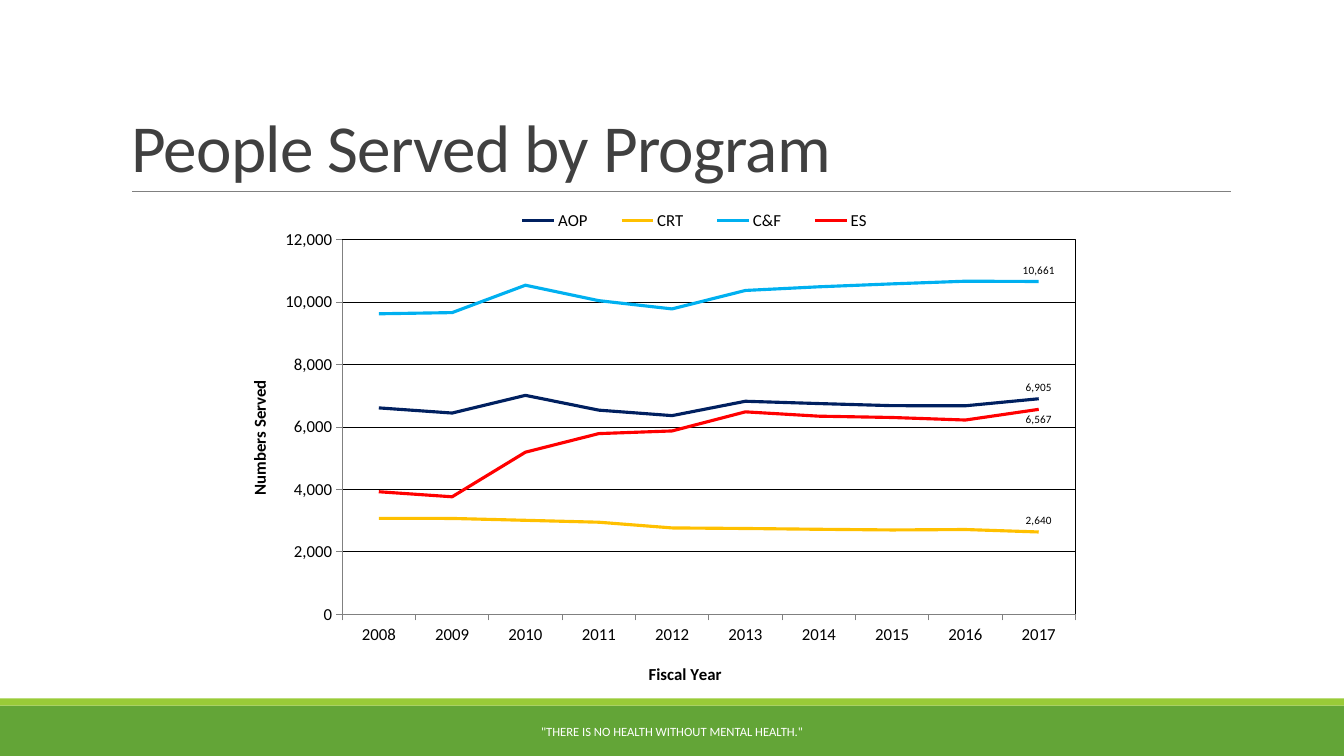
from dataclasses import dataclass

from lxml import etree
from pptx import Presentation
from pptx.chart.chart import Chart
from pptx.chart.data import CategoryChartData
from pptx.dml.color import RGBColor
from pptx.enum.chart import XL_CHART_TYPE, XL_LABEL_POSITION, XL_LEGEND_POSITION, XL_TICK_MARK
from pptx.enum.shapes import MSO_CONNECTOR, MSO_SHAPE
from pptx.enum.text import MSO_ANCHOR, MSO_AUTO_SIZE, PP_ALIGN
from pptx.oxml import parse_xml
from pptx.oxml.ns import nsdecls, qn
from pptx.slide import Slide
from pptx.util import Cm, Pt

LINE_CHART = XL_CHART_TYPE.LINE
ABOVE, BELOW = XL_LABEL_POSITION.ABOVE, XL_LABEL_POSITION.BELOW
LEGEND_TOP = XL_LEGEND_POSITION.TOP
TICK_OUTSIDE, TICK_NONE = XL_TICK_MARK.OUTSIDE, XL_TICK_MARK.NONE
STRAIGHT = MSO_CONNECTOR.STRAIGHT
RECTANGLE = MSO_SHAPE.RECTANGLE
BOTTOM, MIDDLE = MSO_ANCHOR.BOTTOM, MSO_ANCHOR.MIDDLE
NO_AUTOFIT = MSO_AUTO_SIZE.NONE
LEFT, CENTER = PP_ALIGN.LEFT, PP_ALIGN.CENTER

FONT = "Calibri"
TITLE_ONLY = 5
SLIDE_WIDTH, SLIDE_HEIGHT = 33.87, 19.05
COLORS = {
    "band": "63A537",
    "stripe": "99CB38",
    "rule": "808080",
    "title": "404040",
    "white": "FFFFFF",
    "black": "000000",
    "navy": "002060",
    "gold": "FFC000",
    "sky": "00B0F0",
    "red": "FF0000",
}
YEARS = [str(year) for year in range(2008, 2018)]


@dataclass
class Band:
    top: float
    height: float
    color: str


@dataclass
class Program:
    name: str
    color: str
    served: list[int]
    label_position: XL_LABEL_POSITION = ABOVE


BANDS = [Band(17.78, 1.27, "band"), Band(17.6, 0.18, "stripe")]
PROGRAMS = [
    Program("AOP", "navy", [6614, 6448, 7015, 6541, 6366, 6826, 6752, 6685, 6681, 6905]),
    Program("CRT", "gold", [3076, 3073, 3013, 2952, 2769, 2752, 2726, 2704, 2718, 2640]),
    Program("C&F", "sky", [9627, 9665, 10541, 10048, 9783, 10374, 10490, 10585, 10670, 10661]),
    Program("ES", "red", [3929, 3767, 5195, 5791, 5876, 6487, 6348, 6306, 6225, 6567], BELOW),
]


def rgb(color: str) -> RGBColor:
    return RGBColor.from_string(COLORS[color])


def style_font(font, size: float, color: str, bold: bool = False) -> None:
    font.name = FONT
    font.size = Pt(size)
    font.bold = bold
    font.color.rgb = rgb(color)


def style_line(line, color: str, width: float) -> None:
    line.color.rgb = rgb(color)
    line.width = Pt(width)


def add_band(slide: Slide, band: Band) -> None:
    shape = slide.shapes.add_shape(RECTANGLE, 0, Cm(band.top), Cm(SLIDE_WIDTH), Cm(band.height))
    shape.shadow.inherit = False
    shape.fill.solid()
    shape.fill.fore_color.rgb = rgb(band.color)
    shape.line.fill.background()


def add_title_rule(slide: Slide) -> None:
    rule = slide.shapes.add_connector(STRAIGHT, Cm(3.33), Cm(4.83), Cm(31.01), Cm(4.83))
    style_line(rule.line, "rule", 0.5)
    etree.SubElement(rule._element.spPr, qn("a:effectLst"))


def fill_title(slide: Slide) -> None:
    title = slide.shapes.title
    title.left, title.top, title.width, title.height = Cm(3.05), Cm(0.79), Cm(27.94), Cm(4.04)
    frame = title.text_frame
    frame.text = "People Served by Program"
    frame.auto_size = NO_AUTOFIT
    frame.vertical_anchor = BOTTOM
    paragraph = frame.paragraphs[0]
    paragraph.alignment = LEFT
    paragraph.line_spacing = 0.85
    run = paragraph.runs[0]
    style_font(run.font, 48, "title")
    run.font._element.set("spc", "-50")


def add_footer(slide: Slide) -> None:
    footer = slide.shapes.add_textbox(Cm(10.24), Cm(17.93), Cm(13.39), Cm(1.02))
    frame = footer.text_frame
    frame.word_wrap = True
    frame.vertical_anchor = MIDDLE
    frame.text = '"THERE IS NO HEALTH WITHOUT MENTAL HEALTH."'
    paragraph = frame.paragraphs[0]
    paragraph.alignment = CENTER
    style_font(paragraph.runs[0].font, 9, "white")


def set_layout(parent, index: int, inner: bool = False, **fractions: float) -> None:
    previous = parent.find(qn("c:layout"))
    if previous is not None:
        parent.remove(previous)
    layout = etree.Element(qn("c:layout"))
    manual = etree.SubElement(layout, qn("c:manualLayout"))
    if inner:
        etree.SubElement(manual, qn("c:layoutTarget")).set("val", "inner")
    for side in ("x", "y"):
        etree.SubElement(manual, qn(f"c:{side}Mode")).set("val", "edge")
    for name, fraction in fractions.items():
        etree.SubElement(manual, qn(f"c:{name}")).set("val", str(fraction))
    parent.insert(index, layout)


def style_axis(axis, title: str, x: float, y: float) -> None:
    axis.major_tick_mark = TICK_OUTSIDE
    axis.minor_tick_mark = TICK_NONE
    style_line(axis.format.line, "rule", 0.75)
    frame = axis.axis_title.text_frame
    frame.text = title
    style_font(frame.paragraphs[0].runs[0].font, 12, "black", bold=True)
    set_layout(axis.axis_title._element, 1, x=x, y=y)


def style_program(series, program: Program) -> None:
    series.smooth = False
    style_line(series.format.line, program.color, 2.25)
    series.data_labels.show_value = False
    label = series.points[len(YEARS) - 1].data_label
    style_font(label.font, 8, "black")
    label.position = program.label_position
    fill = parse_xml(
        f'<c:spPr {nsdecls("c", "a")}><a:solidFill>'
        f'<a:srgbClr val="{COLORS["white"]}"/></a:solidFill></c:spPr>'
    )
    series._element.find(".//" + qn("c:dLbl")).insert(1, fill)


def style_plot(chart: Chart) -> None:
    plot_area = chart._chartSpace.chart.plotArea
    set_layout(plot_area, 0, inner=True, x=0.149, y=0.093, w=0.824, h=0.756)
    plot_area.append(parse_xml(
        f'<c:spPr {nsdecls("c", "a")}>'
        f'<a:solidFill><a:srgbClr val="{COLORS["white"]}"/></a:solidFill>'
        f'<a:ln w="{Pt(0.75)}"><a:solidFill><a:srgbClr val="{COLORS["black"]}"/>'
        "</a:solidFill></a:ln></c:spPr>"
    ))


def add_served_chart(slide: Slide) -> None:
    data = CategoryChartData(number_format="#,##0")
    data.categories = YEARS
    for program in PROGRAMS:
        data.add_series(program.name, program.served)
    frame = slide.shapes.add_chart(LINE_CHART, Cm(5.28), Cm(4.88), Cm(22.43), Cm(12.5), data)
    chart = frame.chart
    chart.has_title = False
    style_font(chart.font, 12, "black")
    chart.has_legend = True
    chart.legend.position = LEGEND_TOP
    chart.legend.include_in_layout = False
    set_layout(chart.legend._element, 1, x=0.32, y=0.03, w=0.45, h=0.05)
    style_axis(chart.category_axis, "Fiscal Year", 0.49, 0.94)
    value_axis = chart.value_axis
    style_axis(value_axis, "Numbers Served", 0.04, 0.37)
    value_axis.minimum_scale, value_axis.maximum_scale, value_axis.major_unit = 0, 12000, 2000
    value_axis.tick_labels.number_format = "#,##0"
    value_axis.tick_labels.number_format_is_linked = False
    style_line(value_axis.major_gridlines.format.line, "black", 0.75)
    chart.plots[0].vary_by_categories = False
    for series, program in zip(chart.plots[0].series, PROGRAMS):
        style_program(series, program)
    style_plot(chart)


def main() -> None:
    presentation = Presentation()
    presentation.slide_width, presentation.slide_height = Cm(SLIDE_WIDTH), Cm(SLIDE_HEIGHT)
    slide = presentation.slides.add_slide(presentation.slide_layouts[TITLE_ONLY])
    for band in BANDS:
        add_band(slide, band)
    add_title_rule(slide)
    fill_title(slide)
    add_served_chart(slide)
    add_footer(slide)
    presentation.save("out.pptx")


if __name__ == "__main__":
    main()
